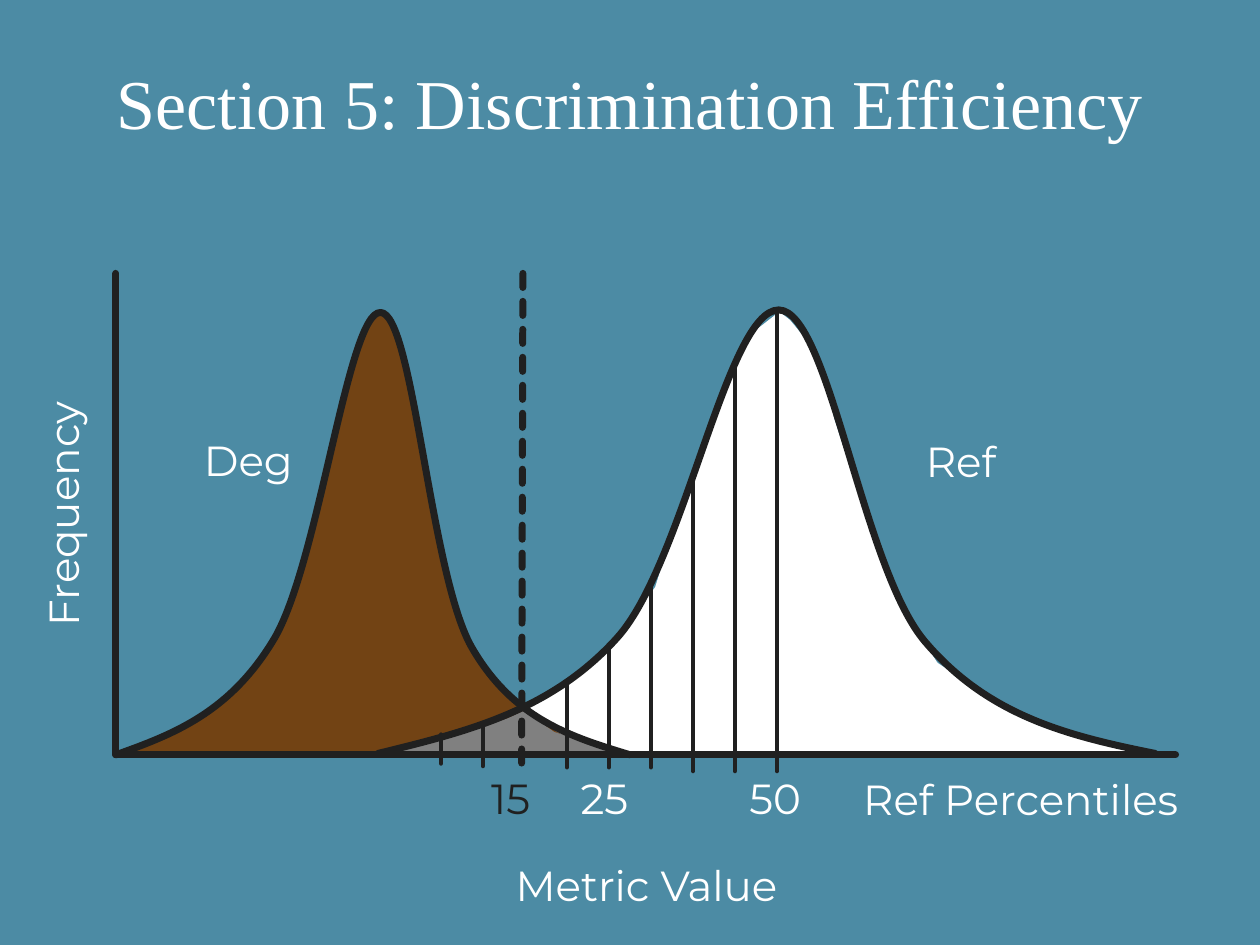
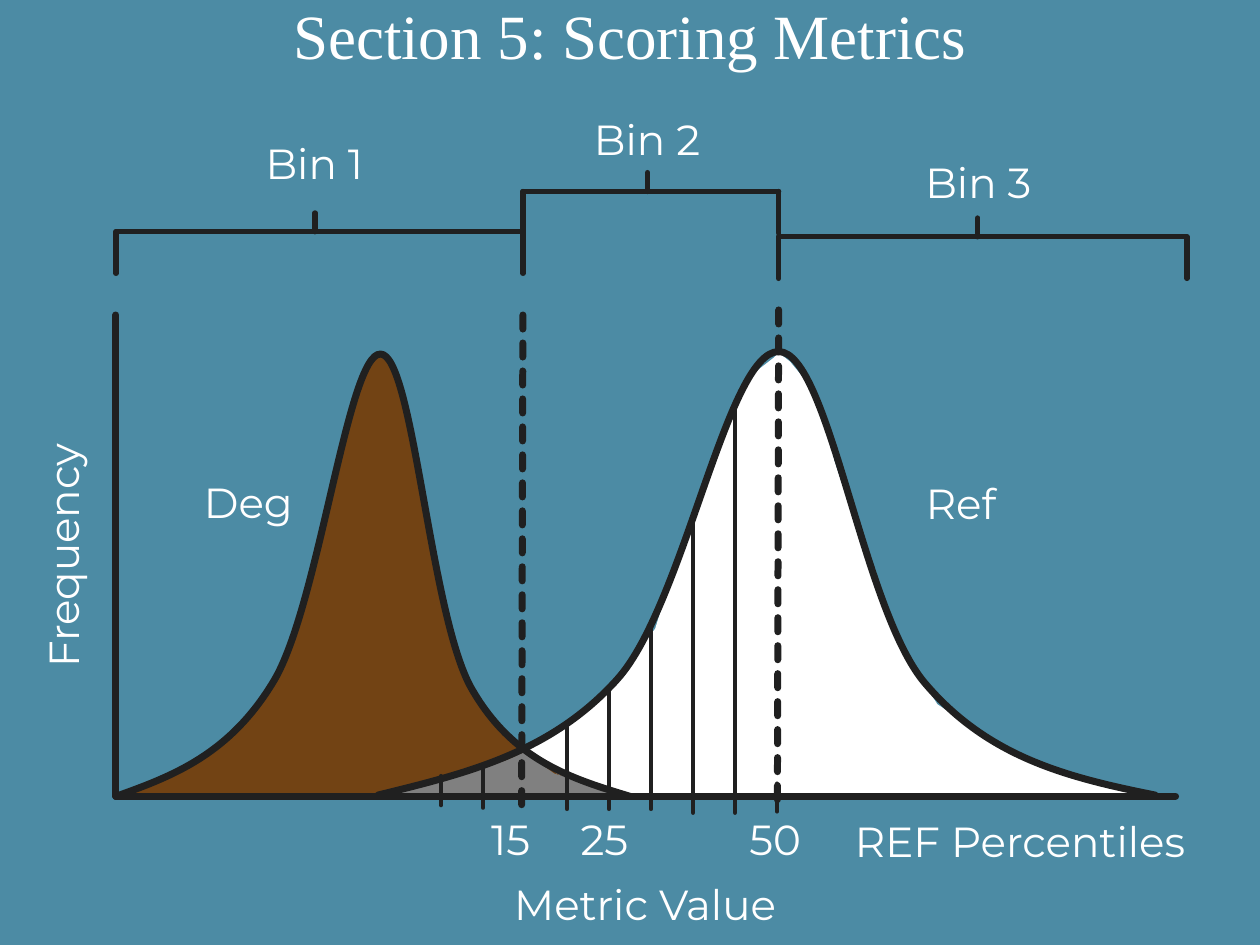
from dataclasses import dataclass

from lxml import etree
from pptx import Presentation
from pptx.dml.color import RGBColor
from pptx.enum.dml import MSO_LINE
from pptx.enum.text import MSO_ANCHOR, MSO_AUTO_SIZE, PP_ALIGN
from pptx.oxml.ns import qn
from pptx.util import Cm, Pt

CENTER, LEFT = PP_ALIGN.CENTER, PP_ALIGN.LEFT
TOP = MSO_ANCHOR.TOP
FIT_SHAPE = MSO_AUTO_SIZE.SHAPE_TO_FIT_TEXT
DASHED = MSO_LINE.SQUARE_DOT
TITLE_ONLY = 5
CM_PER_UNIT = 2.54  # the drawing grid is 10 by 7.5 units


@dataclass(frozen=True)
class Theme:
    background: RGBColor = RGBColor(0x4C, 0x8B, 0xA4)
    light: RGBColor = RGBColor(0xFF, 0xFF, 0xFF)
    ink: RGBColor = RGBColor(0x20, 0x20, 0x20)
    degraded: RGBColor = RGBColor(0x72, 0x43, 0x14)
    overlap: RGBColor = RGBColor(0x80, 0x80, 0x80)
    title_font: str = "Times New Roman"
    label_font: str = "Montserrat"
    label_size: float = 24
    axis_width: float = 4
    bracket_width: float = 3
    tick_width: float = 2.5


THEME = Theme()

# Areas under the curves
REFERENCE_AREA = [
    (3.03, 5.99), (4.18, 5.63), (4.84, 5.14), (5.2, 4.66), (5.39, 4.05),
    (5.59, 3.47), (5.75, 3.08), (5.82, 2.86), (5.96, 2.65), (6.14, 2.51),
    (6.18, 2.47), (6.27, 2.54), (6.41, 2.71), (6.54, 2.93), (6.62, 3.32),
    (6.76, 3.75), (6.93, 4.2), (7.05, 4.6), (7.27, 5), (7.44, 5.26),
    (7.68, 5.42), (7.97, 5.6), (8.18, 5.71), (8.57, 5.83), (9.18, 6.01)]
DEGRADED_AREA = [
    (0.93, 5.99), (1.34, 5.84), (1.7, 5.63), (2.09, 5.24), (2.3, 4.84),
    (2.4, 4.45), (2.55, 3.94), (2.72, 3.28), (2.84, 2.78), (2.96, 2.54),
    (3.03, 2.47), (3.12, 2.58), (3.22, 2.9), (3.29, 3.22), (3.4, 3.82),
    (3.49, 4.22), (3.57, 4.64), (3.73, 5.12), (3.96, 5.46), (4.12, 5.61),
    (4.23, 5.68), (4.42, 5.81), (4.61, 5.9), (4.94, 5.99)]
OVERLAP_AREA = [(3.13, 5.97), (3.74, 5.8), (4.03, 5.7), (4.16, 5.64),
                (4.4, 5.81), (4.63, 5.88), (4.85, 5.97)]

# Bézier outlines: a start, then two controls and an end for each piece
DEGRADED_CURVE = [
    (0.92, 5.99), (1.37, 5.83), (1.82, 5.66), (2.17, 5.08),
    (2.53, 4.49), (2.76, 2.47), (3.02, 2.48),
    (3.28, 2.48), (3.41, 4.54), (3.74, 5.13),
    (4.07, 5.71), (4.54, 5.85), (5, 5.99)]
REFERENCE_CURVE = [
    (3, 5.98), (3.69, 5.81), (4.37, 5.65), (4.9, 5.06),
    (5.43, 4.47), (5.77, 2.46), (6.18, 2.46),
    (6.58, 2.46), (6.84, 4.5), (7.34, 5.09),
    (7.84, 5.68), (8.47, 5.84), (9.17, 5.98)]

# Percentile ticks: step along the axis, top and bottom
TICK_START, TICK_STEP = 3.5, 1 / 3
TICKS = [(0, 5.83, 6.06), (1, 5.75, 6.08), (3, 5.44, 6.09), (4, 5.13, 6.09),
         (5, 4.64, 6.09), (5, 5.18, 6.08), (6, 3.77, 6.08), (6, 5.22, 6.12),
         (7, 2.91, 6.12)]
MEDIAN_FOOT = (8, 5.89, 6.11)
MEDIAN_TICKS = [(8, 5.73, 6.07), (8, 2.48, 6.12), MEDIAN_FOOT]

# Bins: name, left, right, stem, top, and the label's left, top and width
BINS = [("Bin 1", 0.92, 4.15, 2.5, 1.84, 1.93, 1.04, 1.13),
        ("Bin 3", 6.18, 9.42, 7.76, 1.88, 7.08, 1.19, 1.37),
        ("Bin 2", 4.15, 6.18, 5.14, 1.52, 4.53, 0.85, 1.21)]
BRACKET_DROP, STEM_HEIGHT = 0.33, 0.15


def units(value):
    return Cm(value * CM_PER_UNIT)


class Deck:
    """Holds the style and the current slide."""

    def __init__(self, theme):
        self.theme = theme
        self.presentation = Presentation()
        self.presentation.slide_width = units(10)
        self.presentation.slide_height = units(7.5)
        backdrop = self.presentation.slide_master.background.fill
        backdrop.solid()
        backdrop.fore_color.rgb = theme.background
        self.slide = None
        self.drop = 0

    def start_slide(self, title, top, size, drop=0):
        """Add a slide; its plot is lowered by drop."""
        layout = self.presentation.slide_layouts[TITLE_ONLY]
        self.slide = self.presentation.slides.add_slide(layout)
        self.drop = drop
        heading = self.slide.shapes.title
        heading.left, heading.top = units(0.5), units(top)
        heading.width, heading.height = units(9), units(1.08)
        frame = heading.text_frame
        frame.vertical_anchor = TOP
        frame.text = title
        self.format_paragraph(frame.paragraphs[0], size,
                              self.theme.title_font, self.theme.light, CENTER)

    def format_paragraph(self, paragraph, size, font, color, align):
        paragraph.alignment = align
        paragraph.font.size = Pt(size)
        paragraph.font.name = font
        paragraph.font.color.rgb = color

    def stroke(self, shape, width):
        shape.line.color.rgb = self.theme.ink
        shape.line.width = Pt(width)
        shape.element.spPr.find(qn("a:ln")).set("cap", "rnd")

    def line(self, start, end, width, dash=None):
        connector = self.slide.shapes.add_connector(
            1, units(start[0]), units(start[1] + self.drop),
            units(end[0]), units(end[1] + self.drop))
        self.stroke(connector, width)
        if dash:
            connector.line.dash_style = dash
        etree.SubElement(connector.element.spPr, qn("a:effectLst"))

    def outline(self, points, closed):
        placed = [(units(x), units(y + self.drop)) for x, y in points]
        builder = self.slide.shapes.build_freeform(*placed[0])
        builder.add_line_segments(placed[1:], close=closed)
        shape = builder.convert_to_shape()
        shape.shadow.inherit = False
        return shape

    def area(self, points, color):
        shape = self.outline(points, closed=True)
        shape.fill.solid()
        shape.fill.fore_color.rgb = color
        shape.line.fill.background()

    def curve(self, points):
        shape = self.outline(points, closed=False)
        # Join each three straight segments into one cubic piece
        segments = list(shape.element.spPr.iter(qn("a:lnTo")))
        for first in range(0, len(segments), 3):
            piece = segments[first]
            cubic = etree.Element(qn("a:cubicBezTo"))
            piece.addprevious(cubic)
            for segment in segments[first:first + 3]:
                cubic.append(segment[0])
                segment.getparent().remove(segment)
        shape.fill.background()
        self.stroke(shape, self.theme.axis_width)

    def label(self, text, left, top, width, align=LEFT, color=None,
              rotation=0, wrap=True):
        box = self.slide.shapes.add_textbox(
            units(left), units(top + self.drop), units(width), units(0.5))
        box.rotation = rotation
        frame = box.text_frame
        frame.word_wrap = wrap
        frame.auto_size = FIT_SHAPE
        frame.text = text
        self.format_paragraph(frame.paragraphs[0], self.theme.label_size,
                              self.theme.label_font,
                              color or self.theme.light, align)

    def tick(self, step, top, bottom):
        x = TICK_START + step * TICK_STEP
        self.line((x, top), (x, bottom), self.theme.tick_width)

    def bracket(self, left, right, stem, top):
        strokes = [((left, top), (right, top)),
                   ((left, top), (left, top + BRACKET_DROP)),
                   ((stem, top - STEM_HEIGHT), (stem, top)),
                   ((right, top), (right, top + BRACKET_DROP))]
        for start, end in strokes:
            self.line(start, end, self.theme.bracket_width)

    def threshold(self, x, top):
        """Draw a dashed cut-off line that leans slightly left."""
        self.line((x, top), (x - 0.01, top + 3.97), self.theme.axis_width,
                  DASHED)

    def distributions(self, median_ticks, cutoff_color):
        """Draw the two distributions with axes, ticks and shared labels."""
        theme = self.theme
        self.area(REFERENCE_AREA, theme.light)
        self.area(DEGRADED_AREA, theme.degraded)
        self.area(OVERLAP_AREA, theme.overlap)

        # Axes and curves
        origin = (0.92, 5.99)
        for axis_end in ((0.92, 2.17), (9.33, 5.99)):
            self.line(axis_end, origin, theme.axis_width)
        self.curve(DEGRADED_CURVE)
        self.curve(REFERENCE_CURVE)
        self.threshold(4.15, 2.17)

        # Ticks and labels
        for tick in TICKS + median_ticks:
            self.tick(*tick)
        self.label("25", 4.51, 6.08, 0.74)
        self.label("50", 5.85, 6.08, 0.74)
        self.label("15", 3.8, 6.08, 0.67, color=cutoff_color)
        self.label("Ref", 7.25, 3.41, 0.96)
        self.label("Deg", 1.52, 3.4, 0.96)
        self.label("Frequency", -1.42, 3.83, 3.83, CENTER, rotation=270)


def build_efficiency_slide(deck):
    deck.start_slide("Section 5: Discrimination Efficiency", 0.42, 40)
    deck.distributions(MEDIAN_TICKS, deck.theme.ink)
    deck.label("Metric Value", 0.92, 6.77, 8.42, CENTER)
    deck.label("Ref Percentiles", 6.39, 6.09, 3.42, CENTER)


def build_scoring_slide(deck):
    deck.start_slide("Section 5: Scoring Metrics", -0.08, 36, drop=0.33)
    deck.distributions([MEDIAN_FOOT], deck.theme.light)
    deck.label("Metric Value", 0.92, 6.59, 8.4, CENTER)
    deck.label("REF Percentiles", 6.53, 6.09, 3.13, CENTER, wrap=False)

    # Bins above the plot
    deck.drop = 0
    deck.threshold(6.18, 2.46)
    for name, left, right, stem, top, label_left, label_top, width in BINS:
        deck.bracket(left, right, stem, top)
        deck.label(name, label_left, label_top, width, CENTER)


def main():
    deck = Deck(THEME)
    build_efficiency_slide(deck)
    build_scoring_slide(deck)
    deck.presentation.save("out.pptx")


if __name__ == "__main__":
    main()
